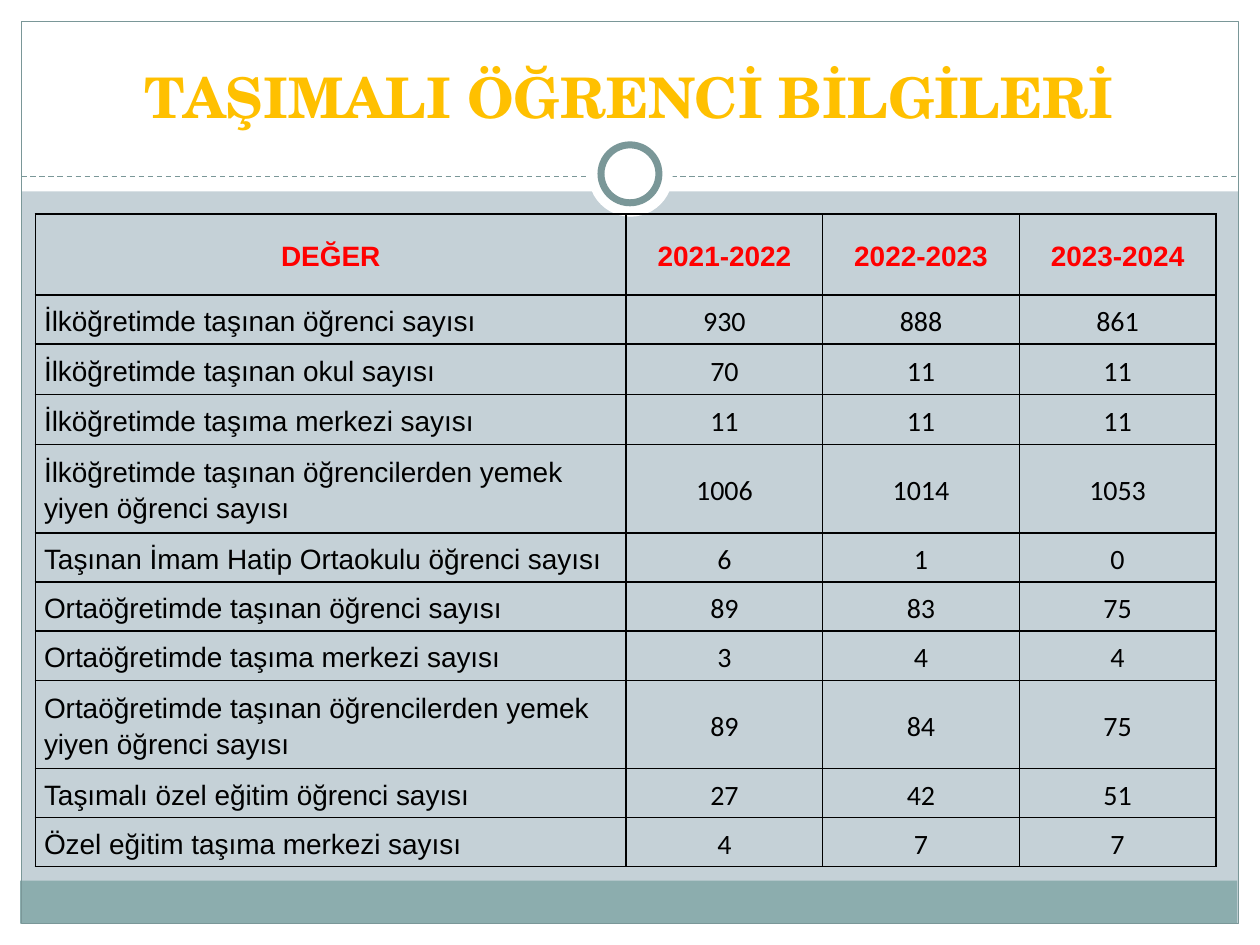
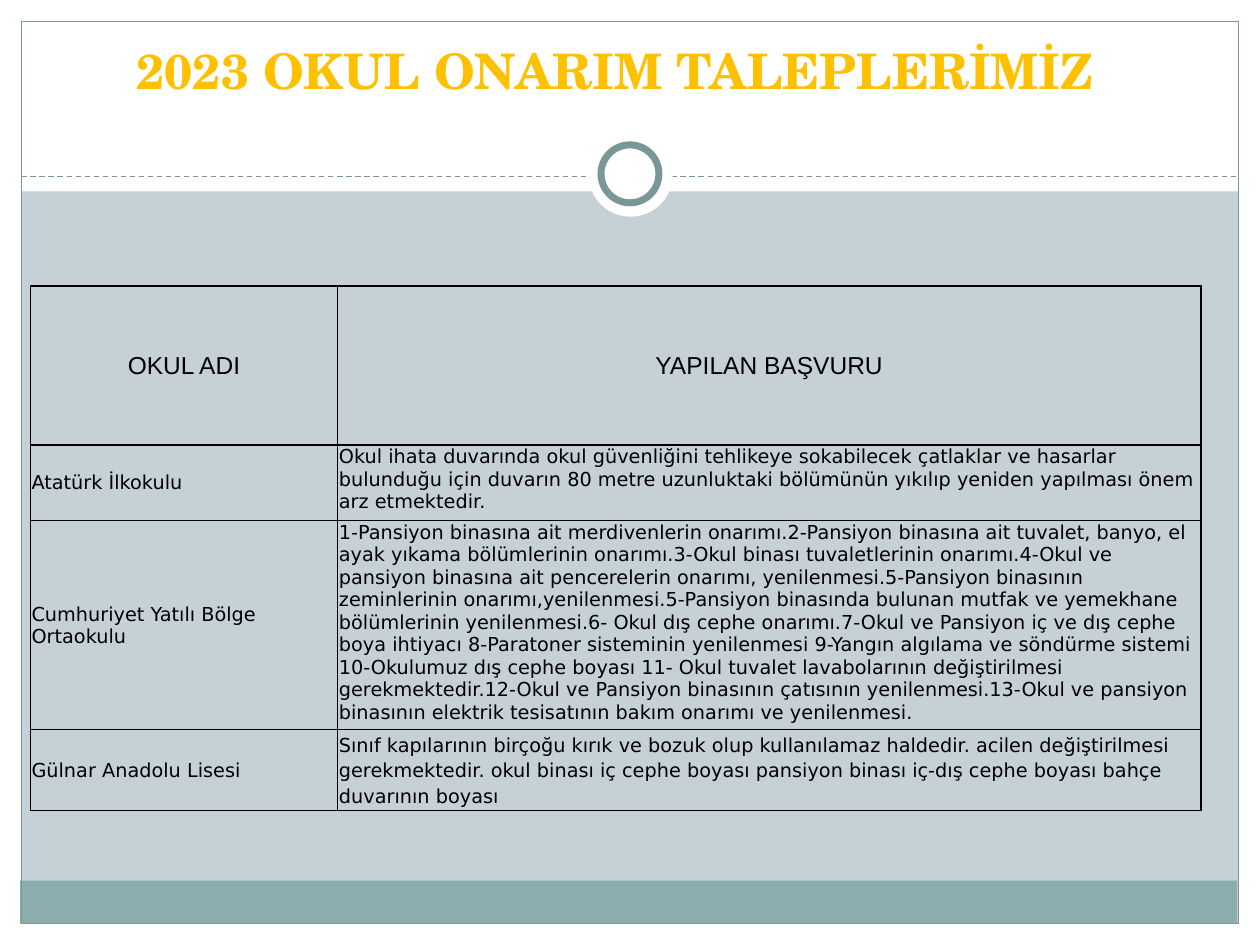
"""Build two slides: bussed pupil figures and school repair requests."""
from lxml import etree
from pptx import Presentation
from pptx import util as u
from pptx.dml.color import RGBColor
from pptx.enum import dml, shapes, text
from pptx.oxml import ns

WHITE = RGBColor(0xFF, 0xFF, 0xFF)
BLACK = RGBColor(0x00, 0x00, 0x00)
RED = RGBColor(0xFF, 0x00, 0x00)
GOLD = RGBColor(0xFF, 0xC0, 0x00)
MIST = RGBColor(0xC5, 0xD1, 0xD7)
TEAL = RGBColor(0x8C, 0xAD, 0xAE)
SLATE = RGBColor(0x7A, 0x97, 0x98)
SERIF = "TeX Gyre Schola"
SANS = "DejaVu Sans"
LEFT, MID = text.PP_ALIGN.LEFT, text.PP_ALIGN.CENTER
RECT, OVAL = shapes.MSO_SHAPE.RECTANGLE, shapes.MSO_SHAPE.OVAL

DECOR = [
    (RECT, (0, 7.33, 10, 0.17), WHITE, None),
    (RECT, (0, 0, 10, 1.52), WHITE, None),
    (RECT, (0, 0, 0.17, 7.5), WHITE, None),
    (RECT, (9.83, 0, 0.17, 7.5), WHITE, None),
    (RECT, (0.16, 6.99, 9.66, 0.34), TEAL, None),
    (RECT, (0.17, 0.17, 9.66, 7.16), None, 0.75),
    (OVAL, (4.67, 1.05, 0.67, 0.67), WHITE, None),
    (OVAL, (4.77, 1.15, 0.46, 0.46), WHITE, 4),
]
TITLES = [
    ("TAŞIMALI ÖĞRENCİ BİLGİLERİ", (0.33, 0.25, 9.33, 0.83), 32, 1.15),
    ("2023 OKUL ONARIM TALEPLERİMİZ", (0.59, 0.21, 8.58, 0.63), 28, None),
]
PUPILS = [
    ("DEĞER", "2021-2022", "2022-2023", "2023-2024"),
    ("İlköğretimde taşınan öğrenci sayısı", "930", "888", "861"),
    ("İlköğretimde taşınan okul sayısı", "70", "11", "11"),
    ("İlköğretimde taşıma merkezi sayısı", "11", "11", "11"),
    ("İlköğretimde taşınan öğrencilerden yemek yiyen öğrenci sayısı",
     "1006", "1014", "1053"),
    ("Taşınan İmam Hatip Ortaokulu öğrenci sayısı", "6", "1", "0"),
    ("Ortaöğretimde taşınan öğrenci sayısı", "89", "83", "75"),
    ("Ortaöğretimde taşıma merkezi sayısı", "3", "4", "4"),
    ("Ortaöğretimde taşınan öğrencilerden yemek yiyen öğrenci sayısı",
     "89", "84", "75"),
    ("Taşımalı özel eğitim öğrenci sayısı", "27", "42", "51"),
    ("Özel eğitim taşıma merkezi sayısı", "4", "7", "7"),
]
REPAIRS = [
    ("OKUL ADI", "YAPILAN BAŞVURU"),
    ("Atatürk İlkokulu",
     "Okul ihata duvarında okul güvenliğini tehlikeye sokabilecek çatlaklar ve "
     "hasarlar bulunduğu için duvarın 80 metre uzunluktaki bölümünün yıkılıp "
     "yeniden yapılması önem arz etmektedir."),
    ("Cumhuriyet Yatılı Bölge Ortaokulu",
     "1-Pansiyon binasına ait merdivenlerin onarımı.2-Pansiyon binasına ait "
     "tuvalet, banyo, el ayak yıkama bölümlerinin onarımı.3-Okul binası "
     "tuvaletlerinin onarımı.4-Okul ve pansiyon binasına ait pencerelerin "
     "onarımı, yenilenmesi.5-Pansiyon binasının zeminlerinin "
     "onarımı,yenilenmesi.5-Pansiyon binasında bulunan mutfak ve yemekhane "
     "bölümlerinin yenilenmesi.6- Okul dış cephe onarımı.7-Okul ve Pansiyon iç "
     "ve dış cephe boya ihtiyacı 8-Paratoner sisteminin yenilenmesi 9-Yangın "
     "algılama ve söndürme sistemi 10-Okulumuz dış cephe boyası 11- Okul "
     "tuvalet lavabolarının değiştirilmesi gerekmektedir.12-Okul ve Pansiyon "
     "binasının çatısının yenilenmesi.13-Okul ve pansiyon binasının elektrik "
     "tesisatının bakım onarımı ve yenilenmesi."),
    ("Gülnar Anadolu Lisesi",
     "Sınıf kapılarının birçoğu kırık ve bozuk olup kullanılamaz haldedir. "
     "acilen değiştirilmesi gerekmektedir. okul binası iç cephe boyası pansiyon "
     "binası iç-dış cephe boyası bahçe duvarının boyası"),
]


def write(frame, words, size, font, color=BLACK, bold=False, align=MID, lead=None):
    """Put one styled run in the first paragraph."""
    para = frame.paragraphs[0]
    para.alignment = align
    para.line_spacing = lead
    run = para.add_run()
    run.text = words
    run.font.size = u.Pt(size)
    run.font.name = font
    run.font.bold = bold
    run.font.color.rgb = color
    return para


def grid(slide, left, top, cols, rows, pads):
    """Add an unfilled table with thin black borders."""
    table = slide.shapes.add_table(
        len(rows), len(cols), u.Inches(left), u.Inches(top),
        u.Inches(sum(cols)), u.Inches(sum(rows))).table
    table.first_row = table.horz_banding = False
    for col, width in zip(table.columns, cols):
        col.width = u.Inches(width)
    for row, height in zip(table.rows, rows):
        row.height = u.Inches(height)
    for cell in table.iter_cells():
        cell.margin_left, cell.margin_top, cell.margin_right, cell.margin_bottom = map(u.Inches, pads)
        cell.vertical_anchor = text.MSO_ANCHOR.MIDDLE
        props = cell._tc.get_or_add_tcPr()
        for side in ("a:lnL", "a:lnR", "a:lnT", "a:lnB"):
            edge = etree.SubElement(props, ns.qn(side), w=str(u.Pt(1)))
            fill = etree.SubElement(edge, ns.qn("a:solidFill"))
            etree.SubElement(fill, ns.qn("a:srgbClr"), val=str(BLACK))
        cell.fill.background()
    return table


deck = Presentation()
deck.slide_width, deck.slide_height = u.Inches(10), u.Inches(7.5)

for words, box, size, lead in TITLES:
    slide = deck.slides.add_slide(deck.slide_layouts[6])
    slide.background.fill.solid()
    slide.background.fill.fore_color.rgb = MIST
    for kind, place, fill, width in DECOR:
        if place == (4.67, 1.05, 0.67, 0.67):
            rule = slide.shapes.add_connector(
                shapes.MSO_CONNECTOR.STRAIGHT, u.Inches(0.17), u.Inches(1.4),
                u.Inches(9.83), u.Inches(1.4))
            rule.line.color.rgb = SLATE
            rule.line.width = u.Pt(0.75)
            rule.line.dash_style = dml.MSO_LINE.DASH
            etree.SubElement(rule._element.spPr, ns.qn("a:effectLst"))
        part = slide.shapes.add_shape(kind, *map(u.Inches, place))
        part.shadow.inherit = False
        if fill is None:
            part.fill.background()
        else:
            part.fill.solid()
            part.fill.fore_color.rgb = fill
        if width is None:
            part.line.fill.background()
        else:
            part.line.color.rgb = SLATE
            part.line.width = u.Pt(width)
    frame = slide.shapes.add_textbox(*map(u.Inches, box)).text_frame
    frame.word_wrap = True
    frame.vertical_anchor = text.MSO_ANCHOR.BOTTOM
    write(frame, words, size, SERIF, GOLD, True, lead=lead)

first, second = deck.slides

highs = [0.64, 0.39, 0.4, 0.4, 0.7, 0.39, 0.39, 0.39, 0.7, 0.39, 0.39]
table = grid(first, 0.28, 1.7, [4.69] + [1.56] * 3, highs, (0.07, 0, 0.07, 0))
for r, row in enumerate(PUPILS):
    for c, words in enumerate(row):
        frame = table.cell(r, c).text_frame
        if r == 0:
            write(frame, words, 16, "Arial", RED, True, lead=1.15)
        elif c == 0:
            write(frame, words, 16, "Arial", align=LEFT, lead=1.15)
        else:
            write(frame, words, 16, "Calibri", lead=1.15)

table = grid(second, 0.24, 2.27, [2.44, 6.85], [1.26, 0.6, 1.62, 0.63],
             (0.01, 0.01, 0.01, 0))
for r, row in enumerate(REPAIRS):
    for c, words in enumerate(row):
        cell = table.cell(r, c)
        if r == 0:
            write(cell.text_frame, words, 14, "Arial")
            continue
        para = write(cell.text_frame, words, 11, SANS, align=LEFT)
        if c == 1:
            cell.vertical_anchor = text.MSO_ANCHOR.TOP
para.line_spacing = 1.15
para.space_before = para.space_after = u.Pt(12)

deck.save("out.pptx")
